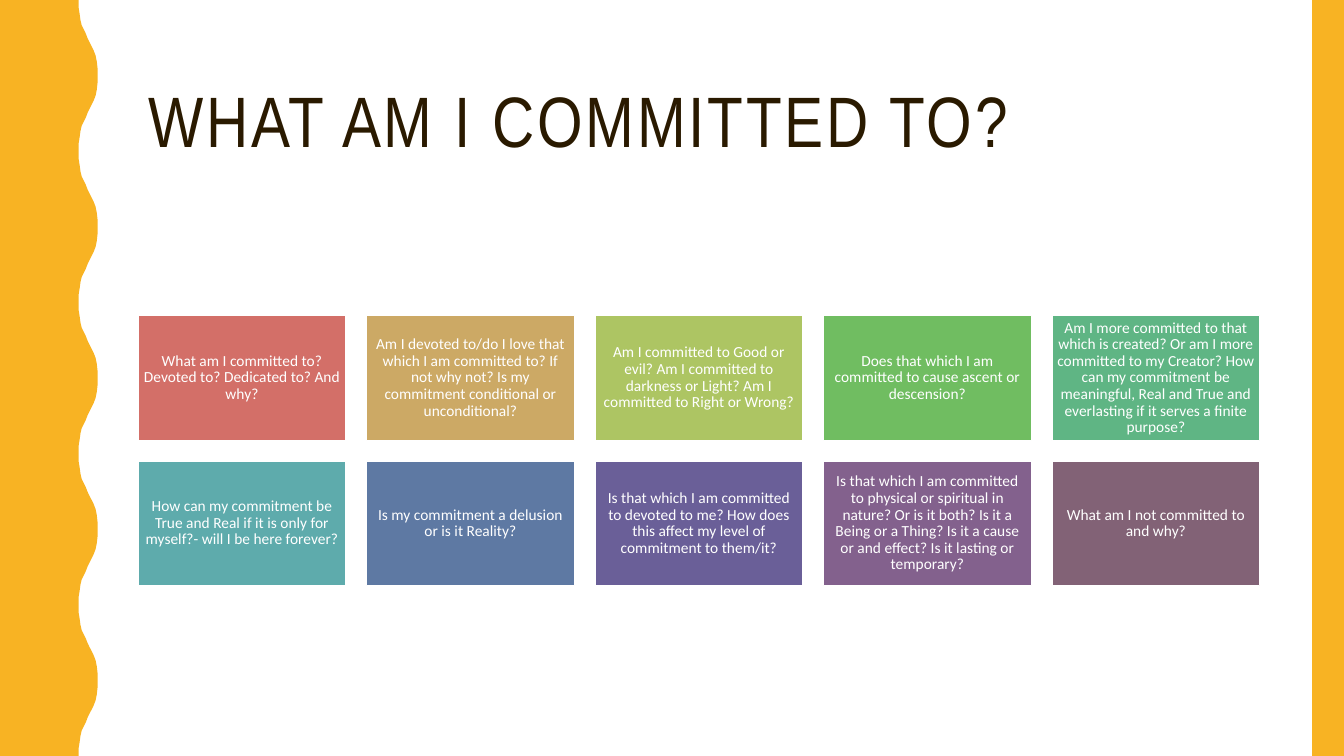
from dataclasses import dataclass

from pptx import Presentation
from pptx.dml.color import RGBColor
from pptx.enum.shapes import MSO_SHAPE
from pptx.enum.text import MSO_ANCHOR, MSO_AUTO_SIZE, PP_ALIGN
from pptx.util import Cm, Pt

RECT = MSO_SHAPE.RECTANGLE
MIDDLE = MSO_ANCHOR.MIDDLE
NO_FIT = MSO_AUTO_SIZE.NONE
LEFT, CENTER = PP_ALIGN.LEFT, PP_ALIGN.CENTER


@dataclass(frozen=True)
class Theme:
    paper: str = "FFFFFF"
    ink: str = "2A1A00"
    accent: str = "F8B323"
    title_font: str = "Arial Narrow"
    body_font: str = "Calibri"
    title_size: float = 51
    card_size: float = 11


THEME = Theme()
SLIDE_W, SLIDE_H = 33.87, 19.05

# Left edge of the paper: half a wave as (x, y) in cm, then mirrored
WAVES = 5
HALF_WAVE = [(1.98, 0), (1.98, 0.18), (2.01, 0.36), (2.03, 0.51), (2.06, 0.64),
             (2.11, 0.74), (2.16, 0.84), (2.21, 0.97), (2.26, 1.07), (2.31, 1.17),
             (2.36, 1.27), (2.41, 1.4), (2.44, 1.55), (2.46, 1.73), (2.46, 1.9)]

COLUMNS = 5
QUESTIONS = [
    ("D36F68", "What am I committed to? Devoted to? Dedicated to? And why?"),
    ("CCA965", "Am I devoted to/do I love that which I am committed to? If not why not? "
               "Is my commitment conditional or unconditional?"),
    ("ADC563", "Am I committed to Good or evil? Am I committed to darkness or Light? "
               "Am I committed to Right or Wrong?"),
    ("70BD61", "Does that which I am committed to cause ascent or descension?"),
    ("5FB584", "Am I more committed to that which is created? Or am I more committed to "
               "my Creator? How can my commitment be meaningful, Real and True and "
               "everlasting if it serves a finite purpose?"),
    ("5EABAC", "How can my commitment be True and Real if it is only for myself?- "
               "will I be here forever?"),
    ("5E79A3", "Is my commitment a delusion or is it Reality?"),
    ("6A5F98", "Is that which I am committed to devoted to me? How does this affect my "
               "level of commitment to them/it?"),
    ("83618D", "Is that which I am committed to physical or spiritual in nature? Or is it "
               "both? Is it a Being or a Thing? Is it a cause or and effect? Is it lasting "
               "or temporary?"),
    ("826276", "What am I not committed to and why?"),
]


def write(sp, text, *, font, size, color, align, spacing=0, inset=None):
    """Put one formatted paragraph into a shape."""
    tf = sp.text_frame
    tf.word_wrap, tf.auto_size, tf.vertical_anchor = True, NO_FIT, MIDDLE
    if inset is not None:
        tf.margin_left = tf.margin_right = tf.margin_top = tf.margin_bottom = Cm(inset)
    p = tf.paragraphs[0]
    p.alignment, p.line_spacing = align, 0.9
    r = p.add_run()
    r.text = text
    r.font.name, r.font.size = font, Pt(size)
    r.font.color.rgb = RGBColor.from_string(color)
    if spacing:
        r.font._element.set("spc", str(spacing * 100))


def paint(sp, fill, line=None):
    """Give a shape a flat fill and an optional thin outline."""
    sp.shadow.inherit = False
    sp.fill.solid()
    sp.fill.fore_color.rgb = RGBColor.from_string(fill)
    if line:
        sp.line.color.rgb = RGBColor.from_string(line)
        sp.line.width = Pt(1)
    else:
        sp.line.fill.background()


def add_box(slide, x, y, w, h, fill, line=None):
    sp = slide.shapes.add_shape(RECT, Cm(x), Cm(y), Cm(w), Cm(h))
    paint(sp, fill, line)
    return sp


def add_wavy_band(slide, x, y, h):
    period = h / WAVES
    wave = HALF_WAVE + [(px, period - py) for px, py in reversed(HALF_WAVE[:-1])]
    edge = [(Cm(x + px), Cm(y + i * period + py)) for i in range(WAVES) for px, py in wave]
    builder = slide.shapes.build_freeform(Cm(x), Cm(y))
    builder.add_line_segments(edge + [(Cm(x), Cm(y + h))], close=True)
    paint(builder.convert_to_shape(), THEME.accent)


def add_title(slide, x, y, w, h, text):
    sp = slide.shapes.title
    sp.left, sp.top, sp.width, sp.height = Cm(x), Cm(y), Cm(w), Cm(h)
    write(sp, text, font=THEME.title_font, size=THEME.title_size,
          color=THEME.ink, align=LEFT, spacing=2)


def add_question_grid(slide, x, y, w, h, gap):
    rows = len(QUESTIONS) // COLUMNS
    card_w = (w - gap * (COLUMNS - 1)) / COLUMNS
    card_h = (h - gap * (rows - 1)) / rows
    for i, (color, question) in enumerate(QUESTIONS):
        row, col = divmod(i, COLUMNS)
        sp = add_box(slide, x + col * (card_w + gap), y + row * (card_h + gap),
                     card_w, card_h, color, THEME.paper)
        write(sp, question, font=THEME.body_font, size=THEME.card_size,
              color=THEME.paper, align=CENTER, inset=0.12)


def main():
    prs = Presentation()
    prs.slide_width, prs.slide_height = Cm(SLIDE_W), Cm(SLIDE_H)
    slide = prs.slides.add_slide(prs.slide_layouts[5])
    slide.background.fill.solid()
    slide.background.fill.fore_color.rgb = RGBColor.from_string(THEME.paper)

    # Title
    add_title(slide, 3.48, 1.07, 28.27, 4.14, "WHAT AM I COMMITTED TO?")

    # Side bands
    add_wavy_band(slide, 0, 0, SLIDE_H)
    add_box(slide, 33.07, 0, 0.8, SLIDE_H, THEME.accent)

    # Question cards
    add_question_grid(slide, 3.48, 7.95, 28.27, 6.81, gap=0.52)

    prs.save("out.pptx")


if __name__ == "__main__":
    main()
